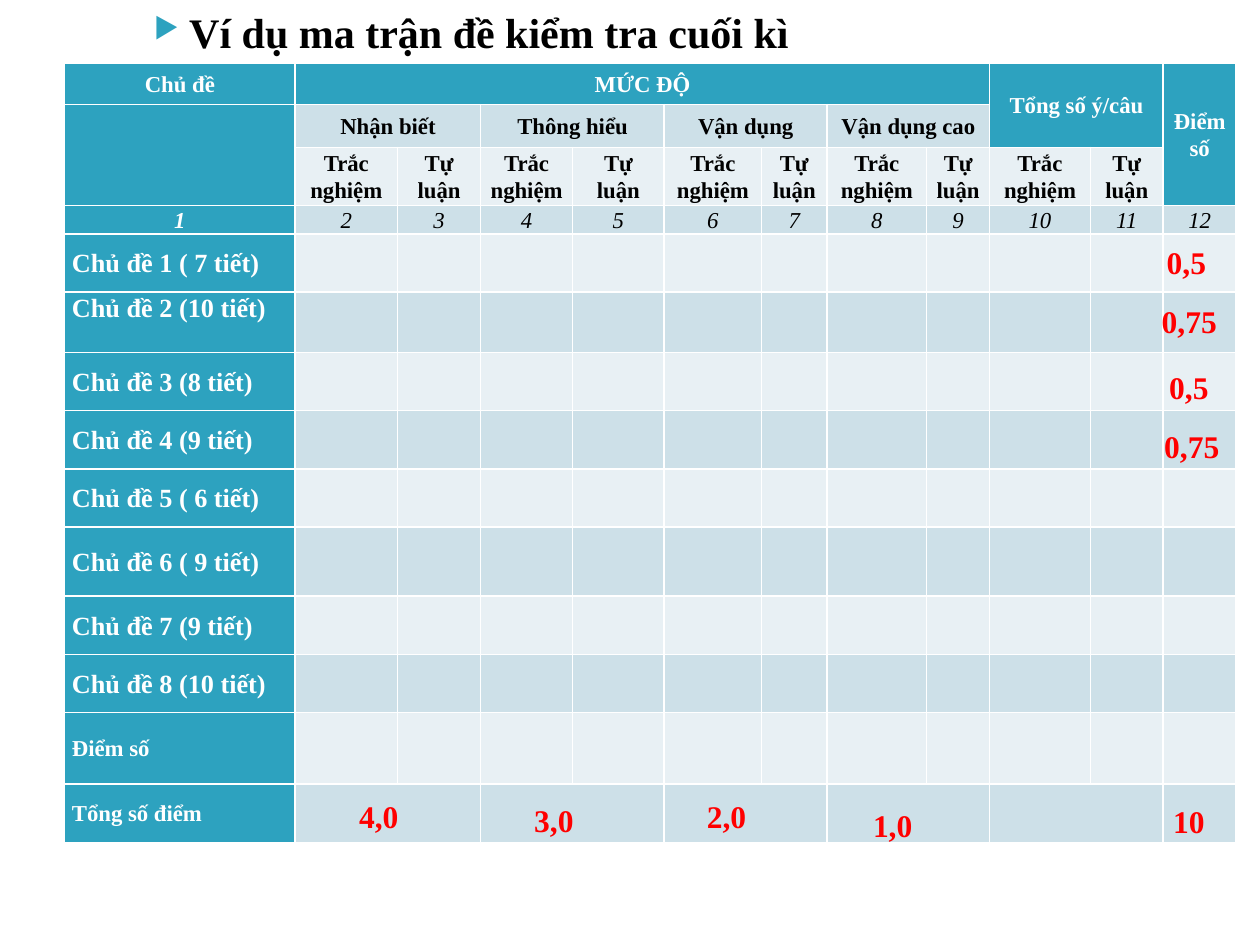
from lxml import etree
from pptx import Presentation
from pptx.dml.color import RGBColor
from pptx.enum.text import MSO_ANCHOR, PP_ALIGN
from pptx.oxml.ns import qn
from pptx.util import Cm, Pt

MIDDLE, TOP = MSO_ANCHOR.MIDDLE, MSO_ANCHOR.TOP
LEFT, CENTER = PP_ALIGN.LEFT, PP_ALIGN.CENTER
FACE = "Times New Roman"
TEAL, DARK, PALE = "2DA2BF", "CDE0E8", "E8F0F4"
WHITE, BLACK, RED = "FFFFFF", "000000", "FF0000"

COLS = [4.65, 2.06, 1.68, 1.85, 1.85, 1.96, 1.32, 2.01, 1.27, 2.03, 1.47, 1.47]
ROWS = [0.84, 0.86, 1.17, 0.58, 1.17, 1.22, 1.17, 1.17, 1.17, 1.4, 1.17, 1.17,
        1.45, 1.17]
LEVELS = ["Nhận biết", "Thông hiểu", "Vận dụng", "Vận dụng cao"]
TOPICS = ["Chủ đề 1 ( 7 tiết)", "Chủ đề 2 (10 tiết)", "Chủ đề 3 (8 tiết)",
          "Chủ đề 4 (9 tiết)", "Chủ đề 5 ( 6 tiết)", "Chủ đề 6 ( 9 tiết)",
          "Chủ đề 7 (9 tiết)", "Chủ đề 8 (10 tiết)"]
TOTALS = ["Điểm số", "Tổng số điểm"]
# Left and top in cm from the table corner
MARKS = [("4,0", 5.69, 14.68), ("3,0", 9.22, 14.76), ("2,0", 12.7, 14.68),
         ("1,0", 16.05, 14.86), ("10", 22.1, 14.78), ("0,5", 21.97, 3.51),
         ("0,75", 21.87, 4.7), ("0,5", 22.02, 6.02), ("0,75", 21.92, 7.21)]


def rgb(code):
    return RGBColor.from_string(code)


def style(para, size, color, bold=True, italic=False):
    font = para.font
    font.name, font.size = FACE, Pt(size)
    font.bold, font.italic = bold, italic
    font.color.rgb = rgb(color)


def write(cell, text, size=13, color=WHITE, align=CENTER, side=0.15, **look):
    cell.text = text
    cell.vertical_anchor = MIDDLE
    cell.margin_left = cell.margin_right = Cm(side)
    cell.margin_top = cell.margin_bottom = 0
    para = cell.text_frame.paragraphs[0]
    para.alignment, para.line_spacing = align, 1.07
    style(para, size, color, **look)


def add_title(slide, left, top, width, height):
    title = slide.shapes.title
    title.left, title.top = Cm(left), Cm(top)
    title.width, title.height = Cm(width), Cm(height)
    frame = title.text_frame
    frame.text = "Ví dụ ma trận đề kiểm tra cuối kì"
    frame.vertical_anchor = MIDDLE
    para = frame.paragraphs[0]
    props = para._p.get_or_add_pPr()
    props.set("marL", str(Cm(1.02)))
    props.set("indent", str(Cm(-0.71)))
    tint = etree.SubElement(props, qn("a:buClr"))
    etree.SubElement(tint, qn("a:srgbClr"), val=TEAL)
    etree.SubElement(props, qn("a:buSzPct"), val="68000")
    etree.SubElement(props, qn("a:buChar"), char="▶")
    para.alignment = LEFT
    style(para, 24, BLACK)


def fill_head(table):
    def span(row, col, end_row, end_col):
        cell = table.cell(row, col)
        cell.merge(table.cell(end_row, end_col))
        return cell

    write(table.cell(0, 0), "Chủ đề")
    write(span(0, 1, 0, 8), "MỨC ĐỘ")
    write(span(0, 9, 1, 10), "Tổng số ý/câu")
    write(span(0, 11, 2, 11), "Điểm số")
    span(1, 0, 2, 0)
    for idx, level in enumerate(LEVELS):
        col = 1 + 2 * idx
        write(span(1, col, 1, col + 1), level, color=BLACK)
    for col in range(1, 11):
        kind = "Trắc nghiệm" if col % 2 else "Tự luận"
        write(table.cell(2, col), kind, color=BLACK, side=0.18)
    for col in range(12):
        write(table.cell(3, col), str(col + 1), color=BLACK if col else WHITE,
              bold=col == 0, italic=True)


def fill_body(table):
    for row, text in enumerate(TOPICS + TOTALS, 4):
        size = 13 if text in TOTALS else 15
        write(table.cell(row, 0), text, size=size, align=LEFT)
    table.cell(5, 0).vertical_anchor = TOP
    last = len(ROWS) - 1
    for col in range(1, 11, 2):
        table.cell(last, col).merge(table.cell(last, col + 1))


def add_matrix(slide, left, top):
    table = slide.shapes.add_table(len(ROWS), len(COLS), Cm(left), Cm(top),
                                   Cm(sum(COLS)), Cm(sum(ROWS))).table
    for col, width in zip(table.columns, COLS):
        col.width = Cm(width)
    for idx, height in enumerate(ROWS):
        table.rows[idx].height = Cm(height)
        for col in range(len(COLS)):
            head = (idx == 0 or col == 0 or (idx == 1 and col > 8)
                    or (idx == 2 and col == 11))
            fill = table.cell(idx, col).fill
            fill.solid()
            fill.fore_color.rgb = rgb(TEAL if head else DARK if idx % 2 else PALE)
    fill_head(table)
    fill_body(table)


def add_marks(slide, left, top):
    for text, across, down in MARKS:
        box = slide.shapes.add_textbox(Cm(left + across), Cm(top + down),
                                       Cm(2), Cm(1.02))
        frame = box.text_frame
        frame.word_wrap = True
        frame.text = text
        style(frame.paragraphs[0], 18, RED)


def main():
    deck = Presentation()
    deck.slide_width, deck.slide_height = Cm(25.4), Cm(19.05)
    slide = deck.slides.add_slide(deck.slide_layouts[5])
    add_matrix(slide, 1.3, 1.27)
    add_title(slide, 2.54, 0, 20.78, 1.27)
    add_marks(slide, 1.3, 1.27)
    deck.save("out.pptx")


if __name__ == "__main__":
    main()
